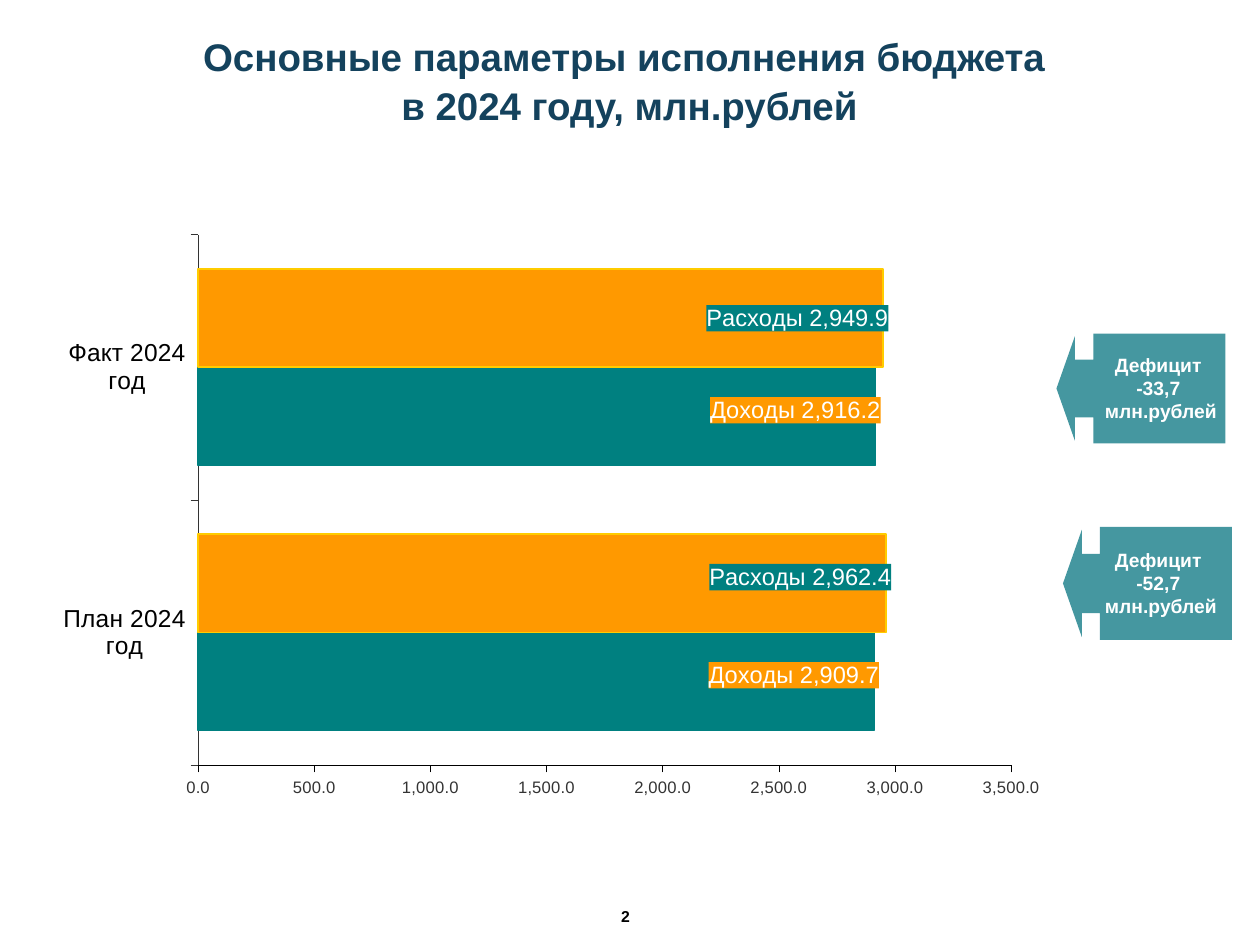
from copy import deepcopy

from lxml.etree import SubElement
from pptx import Presentation
from pptx.chart.data import CategoryChartData
from pptx.dml.color import RGBColor
from pptx.enum.chart import XL_CHART_TYPE as ChartType
from pptx.enum.chart import XL_LABEL_POSITION as LabelPosition
from pptx.enum.chart import XL_TICK_MARK as TickMark
from pptx.enum.shapes import MSO_SHAPE as Shape
from pptx.enum.text import MSO_ANCHOR as Anchor
from pptx.enum.text import MSO_AUTO_SIZE as AutoSize
from pptx.enum.text import PP_ALIGN as Align
from pptx.oxml import parse_xml
from pptx.oxml.ns import nsdecls, qn
from pptx.util import Emu, Pt

PX = 914400 // 126
FONT = "Arial"
NUMBER_FORMAT = "#,##0.0"
COLORS = {
    "title": "14425D",
    "callout": "4597A0",
    "income": "008080",
    "expense": "FF9900",
    "expense_line": "FFCC00",
    "axis": "333333",
    "black": "000000",
    "white": "FFFFFF",
}
CATEGORIES = ["План 2024 год", "Факт 2024 год"]
# name, values, fill, line, label fill, label shifts as (x, y) parts of the chart
SERIES = [
    ("Доходы", (2909.7, 2916.2), "income", "income", "expense",
     [(0.01, -0.01), (0.01, -0.01)]),
    ("Расходы", (2962.4, 2949.9), "expense", "expense_line", "income",
     [(0.01, -0.01), (0.01, 0)]),
]
# callout frame before rotation, text box frame, deficit
DEFICITS = [
    ((1086, 304, 110, 169), (1089, 347, 144, 83), "-33,7 "),
    ((1091, 499, 113, 169), (1089, 542, 144, 83), "-52,7 "),
]


def px(*lengths):
    return [Emu(length * PX) for length in lengths]


def color(name):
    return RGBColor.from_string(COLORS[name])


def style_font(font, size, color_name, bold=False):
    font.name = FONT
    font.size = Pt(size)
    font.bold = bold
    font.color.rgb = color(color_name)


def add_run(paragraph, text, size, color_name):
    paragraph.alignment = Align.CENTER
    run = paragraph.add_run()
    run.text = text
    style_font(run.font, size, color_name, bold=True)


def add_title(slide, frame, lines):
    title = slide.shapes.title
    title.left, title.top, title.width, title.height = px(*frame)
    text_frame = title.text_frame
    text_frame.auto_size = AutoSize.NONE
    text_frame.vertical_anchor = Anchor.MIDDLE
    paragraph = text_frame.paragraphs[0]
    paragraph.line_spacing = 1.06
    for index, line in enumerate(lines):
        if index:
            paragraph.add_line_break()
        add_run(paragraph, line, 22, "title")


def add_text(slide, frame, lines, size, color_name, anchor=Anchor.TOP):
    text_frame = slide.shapes.add_textbox(*px(*frame)).text_frame
    text_frame.word_wrap = True
    text_frame.auto_size = AutoSize.SHAPE_TO_FIT_TEXT
    text_frame.vertical_anchor = anchor
    for index, line in enumerate(lines):
        paragraph = text_frame.add_paragraph() if index else text_frame.paragraphs[0]
        add_run(paragraph, line, size, color_name)


def add_callout(slide, frame):
    callout = slide.shapes.add_shape(Shape.DOWN_ARROW_CALLOUT, *px(*frame))
    callout.rotation = 90
    callout.shadow.inherit = False
    callout.fill.solid()
    callout.fill.fore_color.rgb = color("callout")
    callout.line.fill.background()
    for index, value in enumerate((0.525, 0.475, 0.167, 0.782)):
        callout.adjustments[index] = value


def layout_xml(**parts):
    """Return a manual layout element with the given settings in order."""
    settings = "".join(f'<c:{tag} val="{value}"/>' for tag, value in parts.items())
    return parse_xml(f'<c:layout {nsdecls("c")}><c:manualLayout>{settings}'
                     '</c:manualLayout></c:layout>')


def style_axis(axis, size, text_color, line_color):
    axis.has_major_gridlines = False
    axis.major_tick_mark = TickMark.OUTSIDE
    axis.minor_tick_mark = TickMark.NONE
    axis.format.line.color.rgb = color(line_color)
    axis.format.line.width = Pt(0.25)
    style_font(axis.tick_labels.font, size, text_color)


def label_series(series, fill, shifts):
    labels = series.data_labels
    labels.show_value = True
    labels.show_series_name = True
    labels.number_format = NUMBER_FORMAT
    labels.number_format_is_linked = False
    labels.position = LabelPosition.INSIDE_END
    style_font(labels.font, 13.5, "white")

    # Label background and separator
    element = series.data_labels.font and series._element.find(qn("c:dLbls"))
    element.find(qn("c:numFmt")).addnext(parse_xml(
        f'<c:spPr {nsdecls("c", "a")}><a:solidFill><a:srgbClr val="{COLORS[fill]}"/>'
        '</a:solidFill></c:spPr>'))
    element.find(qn("c:showBubbleSize")).addnext(
        parse_xml(f'<c:separator {nsdecls("c")} xml:space="preserve"> </c:separator>'))

    # Each point takes the series format and its own shift
    shared = [child for child in element if child.tag != qn("c:showLeaderLines")]
    for index, (x, y) in enumerate(shifts):
        label = SubElement(element, qn("c:dLbl"))
        SubElement(label, qn("c:idx")).set("val", str(index))
        label.append(layout_xml(x=x, y=y))
        label.extend(deepcopy(child) for child in shared)
        element.insert(index, label)


def add_budget_chart(slide, frame):
    data = CategoryChartData(number_format=NUMBER_FORMAT)
    data.categories = CATEGORIES
    for name, values, *_ in SERIES:
        data.add_series(name, values)
    chart = slide.shapes.add_chart(ChartType.BAR_CLUSTERED, *px(*frame), data).chart
    chart.has_legend = False
    chart.has_title = False
    style_font(chart.font, 9.5, "black")

    # Axes
    style_axis(chart.category_axis, 14, "black", "axis")
    value_axis = chart.value_axis
    style_axis(value_axis, 9.5, "axis", "black")
    value_axis.minimum_scale = 0
    value_axis.maximum_scale = 3500
    value_axis.major_unit = 500
    value_axis.tick_labels.number_format = NUMBER_FORMAT
    value_axis.tick_labels.number_format_is_linked = False

    # Bars
    plot = chart.plots[0]
    plot.gap_width = 70
    plot.overlap = 0
    plot.vary_by_categories = False
    for series, (_, _, fill, line, label_fill, shifts) in zip(plot.series, SERIES):
        series.format.fill.solid()
        series.format.fill.fore_color.rgb = color(fill)
        series.format.line.color.rgb = color(line)
        series.format.line.width = Pt(1)
        label_series(series, label_fill, shifts)

    # Plot area inside the chart
    plot_area = chart._chartSpace.chart.plotArea
    for old_layout in plot_area.findall(qn("c:layout")):
        plot_area.remove(old_layout)
    plot_area.insert(0, layout_xml(layoutTarget="inner", xMode="edge", yMode="edge",
                                   x=0.136, y=0.022, w=0.818, h=0.85))


def main():
    presentation = Presentation()
    presentation.slide_width, presentation.slide_height = px(1260, 945)
    slide = presentation.slides.add_slide(presentation.slide_layouts[5])

    add_title(slide, (34, 45, 1191, 69),
              ["Основные параметры исполнения бюджета ", "в 2024 году, млн.рублей"])
    add_budget_chart(slide, (63, 221, 994, 624))
    for callout_frame, text_frame, deficit in DEFICITS:
        add_callout(slide, callout_frame)
        add_text(slide, text_frame, ["Дефицит ", deficit, "млн.рублей"], 11, "white")
    # Page number
    add_text(slide, (591, 900, 69, 32), ["2"], 9, "black", Anchor.MIDDLE)

    presentation.save("out.pptx")


if __name__ == "__main__":
    main()
